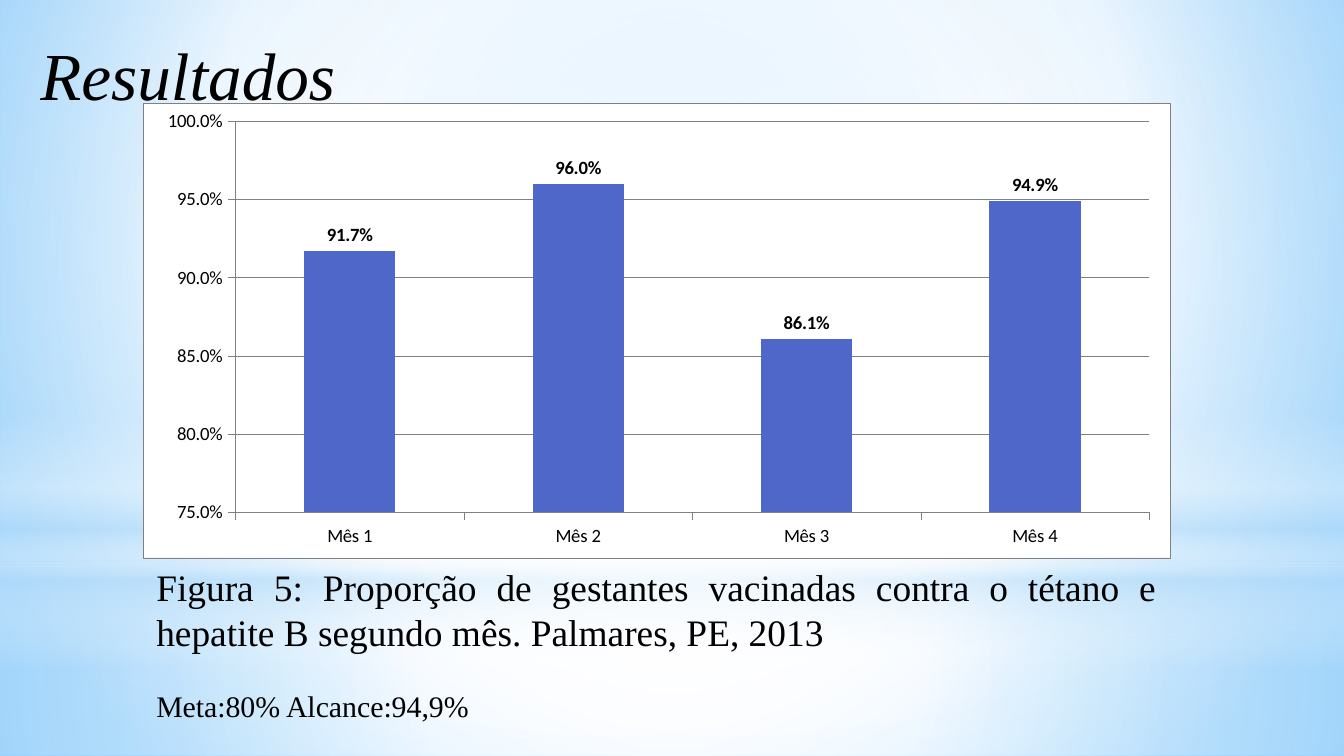
import pptx
import pptx.chart.data
import pptx.dml.color
import pptx.enum.chart
import pptx.enum.shapes
import pptx.enum.text
import pptx.oxml
import pptx.oxml.ns
import pptx.util

PX = 914400 / 134.4
COLORS = {"ink": "000000", "bar": "4E67C8", "rule": "808080", "white": "FFFFFF",
          "mist": "B4DCFA", "sky": "9ED5FF", "deep": "5BB9FF"}
SERIF = "Times New Roman"
CENTER = (50, 50, 50, 50)


def px(n):
    return pptx.util.Emu(round(n * PX))


def rgb(name):
    return pptx.dml.color.RGBColor.from_string(COLORS[name])


def xml(text):
    ns = pptx.oxml.ns.nsdecls("a", "c")
    return pptx.oxml.parse_xml(text.replace(">", f" {ns}>", 1))


def set_font(font, color="ink", **values):
    font.color.rgb = rgb(color)
    for key, value in values.items():
        setattr(font, key, value)


def gradient(stops, focus=None):
    """Stops are (position, color, opacity); without a focus it runs downwards."""
    gs = "".join(
        f'<a:gs pos="{pos * 1000}"><a:srgbClr val="{COLORS[color]}">'
        f'<a:alpha val="{alpha * 1000}"/></a:srgbClr></a:gs>'
        for pos, color, alpha in stops)
    shade = '<a:lin ang="5400000" scaled="0"/>'
    if focus:
        sides = " ".join(f'{k}="{v * 1000}"' for k, v in zip("ltrb", focus))
        shade = f'<a:path path="circle"><a:fillToRect {sides}/></a:path>'
    return xml(f'<a:gradFill rotWithShape="1"><a:gsLst>{gs}</a:gsLst>{shade}</a:gradFill>')


def swap_fill(fill, parent, grad):
    fill.solid()
    solid = parent.find(pptx.oxml.ns.qn("a:solidFill"))
    parent.replace(solid, grad)


def add_backdrop(s, width, height):
    # Slide background
    fill = s.background.fill
    fill.solid()
    swap_fill(fill, s.element.xpath(".//p:bgPr")[0], gradient(
        [(0, "sky", 100), (60, "white", 100), (100, "deep", 100)], (20, 10, 20, 60)))

    # Translucent veils, back to front
    kinds = pptx.enum.shapes.MSO_SHAPE
    horizon = 563
    veils = [
        (kinds.RECTANGLE, horizon, height - horizon, CENTER,
         [(0, "white", 91), (37, "white", 76), (100, "mist", 79)]),
        (kinds.RECTANGLE, 0, horizon, CENTER,
         [(0, "white", 89), (48, "white", 62), (100, "mist", 79)]),
        (kinds.RECTANGLE, 415, 252, None,
         [(0, "white", 0), (29, "white", 30), (45, "mist", 40),
          (55, "white", 26), (65, "mist", 60), (100, "white", 0)]),
        (kinds.OVAL, 176, horizon, CENTER, [(0, "white", 100), (56, "white", 0)]),
    ]
    for kind, top, tall, focus, stops in veils:
        veil = s.shapes.add_shape(kind, 0, px(top), px(width), px(tall))
        veil.shadow.inherit = False
        veil.line.fill.background()
        swap_fill(veil.fill, veil.element.spPr, gradient(stops, focus))


def add_title(s, x, y, w, h):
    title = s.shapes.title
    s.shapes.element.append(title.element)  # above the veils
    title.left, title.top, title.width, title.height = map(px, (x, y, w, h))
    tf = title.text_frame
    tf.text = "Resultados"
    tf.auto_size = pptx.enum.text.MSO_AUTO_SIZE.NONE
    tf.vertical_anchor = pptx.enum.text.MSO_ANCHOR.TOP
    tf.margin_top = px(14)
    p = tf.paragraphs[0]
    p.alignment = pptx.enum.text.PP_ALIGN.LEFT
    set_font(p.runs[0].font, name=SERIF, size=pptx.util.Pt(36), italic=True)


def frame_xml(line):
    return xml(f'<c:spPr><a:solidFill><a:srgbClr val="{COLORS["white"]}"/></a:solidFill>'
               f'{line}</c:spPr>')


def style_line(line):
    line.color.rgb = rgb("rule")
    line.width = pptx.util.Pt(0.25)


def add_coverage_chart(s, x, y, w, h):
    data = pptx.chart.data.CategoryChartData(number_format="0.0%")
    data.categories = [f"Mês {month}" for month in range(1, 5)]
    data.add_series("Series 1", (0.917, 0.96, 0.861, 0.949))
    enums = pptx.enum.chart
    chart = s.shapes.add_chart(enums.XL_CHART_TYPE.COLUMN_CLUSTERED,
                               *map(px, (x, y, w, h)), data).chart
    chart.has_title = chart.has_legend = False
    set_font(chart.font, name="Calibri", size=pptx.util.Pt(10))

    # Axes
    for axis in (chart.category_axis, chart.value_axis):
        axis.major_tick_mark = enums.XL_TICK_MARK.OUTSIDE
        style_line(axis.format.line)
    scale = {"minimum_scale": 0.75, "maximum_scale": 1, "major_unit": 0.05}
    for key, value in scale.items():
        setattr(chart.value_axis, key, value)
    style_line(chart.value_axis.major_gridlines.format.line)
    ticks = chart.value_axis.tick_labels
    ticks.number_format, ticks.number_format_is_linked = "0.0%", False

    # Bars and labels
    plot = chart.plots[0]
    plot.gap_width = 150
    plot.vary_by_categories = False
    bars = plot.series[0]
    bars.format.fill.solid()
    bars.format.fill.fore_color.rgb = rgb("bar")
    labels = bars.data_labels
    settings = {"show_value": True, "number_format": "0.0%",
                "number_format_is_linked": False,
                "position": enums.XL_LABEL_POSITION.OUTSIDE_END}
    for key, value in settings.items():
        setattr(labels, key, value)
    set_font(labels.font, name="Calibri", size=pptx.util.Pt(10), bold=True)

    # Plot area and border
    space = chart.element
    area = space.xpath(".//c:plotArea")[0]
    for old in area.xpath("c:layout"):
        area.remove(old)
    spots = "".join(f'<c:{k} val="{v}"/>' for k, v in
                    {"x": 0.09, "y": 0.04, "w": 0.89, "h": 0.86}.items())
    area.insert(0, xml('<c:layout><c:manualLayout><c:layoutTarget val="inner"/>'
                       '<c:xMode val="edge"/><c:yMode val="edge"/>'
                       f'{spots}</c:manualLayout></c:layout>'))
    area.append(frame_xml("<a:ln><a:noFill/></a:ln>"))
    space.xpath("c:chart")[0].addnext(frame_xml(
        f'<a:ln w="3175"><a:solidFill><a:srgbClr val="{COLORS["rule"]}"/>'
        '</a:solidFill></a:ln>'))


def add_caption(s, x, y, w, h):
    tf = s.shapes.add_textbox(*map(px, (x, y, w, h))).text_frame
    tf.word_wrap = True
    lines = [
        ("Figura 5: Proporção de gestantes vacinadas contra o tétano e "
         "hepatite B segundo mês. Palmares, PE, 2013", 20, 0),
        ("Meta:80% Alcance:94,9%", 16, 18),
    ]
    for i, (text, size, gap) in enumerate(lines):
        p = tf.add_paragraph() if i else tf.paragraphs[0]
        p.alignment = pptx.enum.text.PP_ALIGN.JUSTIFY
        p.space_before = pptx.util.Pt(gap)
        r = p.add_run()
        r.text = text
        set_font(r.font, name=SERIF, size=pptx.util.Pt(size))


def main():
    width, height = 1344, 756
    prs = pptx.Presentation()
    prs.slide_width, prs.slide_height = px(width), px(height)
    s = prs.slides.add_slide(prs.slide_layouts[5])
    add_backdrop(s, width, height)
    add_coverage_chart(s, 143, 103, 1027, 455)
    add_title(s, 27, 19, 380, 126)
    add_caption(s, 143, 558, 1027, 267)
    prs.save("out.pptx")


if __name__ == "__main__":
    main()
